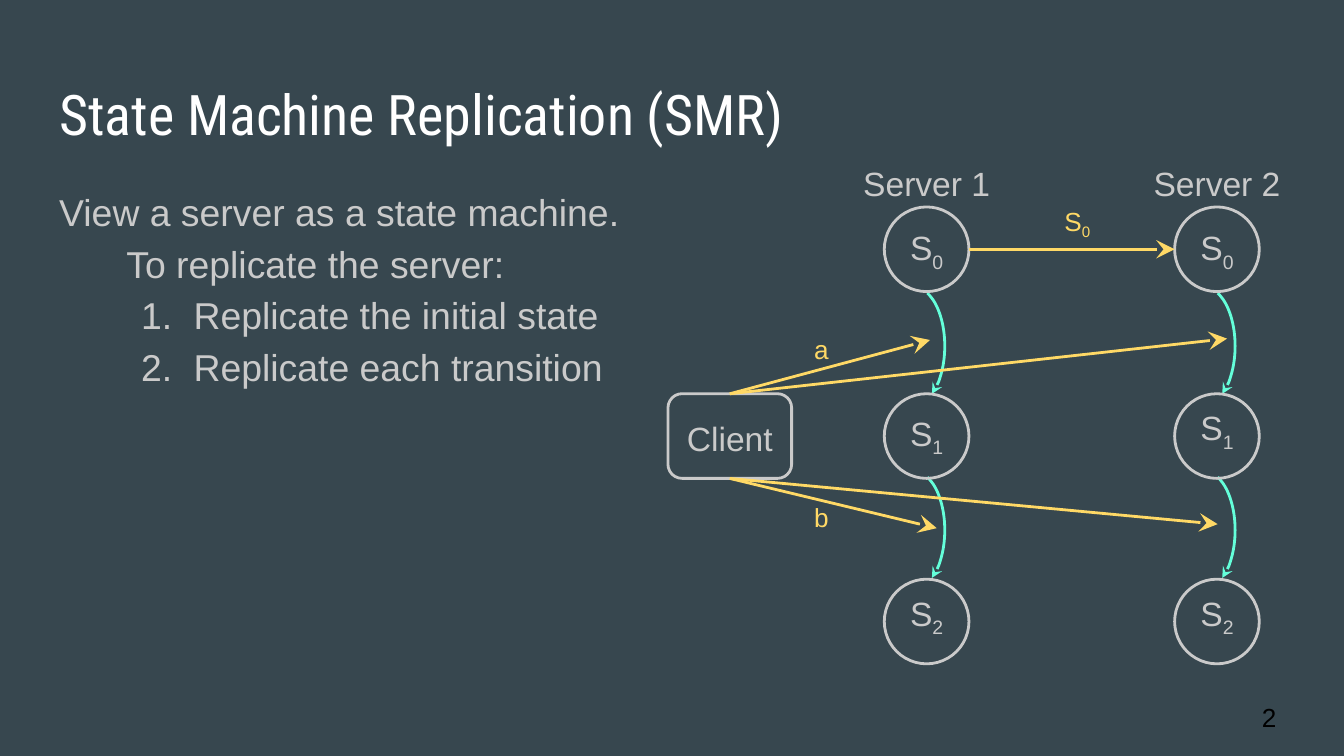
"""Build a slide that explains state machine replication with two servers and a client."""
from lxml.etree import SubElement
from pptx import Presentation
from pptx.dml.color import RGBColor
from pptx.enum.shapes import MSO_CONNECTOR as LINK, MSO_SHAPE as SHAPE
from pptx.enum.text import MSO_ANCHOR as ANCHOR, MSO_AUTO_SIZE as FIT, PP_ALIGN as ALIGN
from pptx.oxml.ns import qn
from pptx.util import Inches, Pt

SLATE = RGBColor(0x37, 0x47, 0x4F)
WHITE = RGBColor(0xFF, 0xFF, 0xFF)
GREY = RGBColor(0xCA, 0xCA, 0xCA)
YELLOW = RGBColor(0xFF, 0xD9, 0x66)
MINT = RGBColor(0x64, 0xFF, 0xDA)
BLACK = RGBColor(0, 0, 0)

TITLE = "State Machine Replication (SMR)"
BODY = [
    ("View a server as a state machine.", 0, 0, False),
    ("To replicate the server:", 0.5, 0, False),
    ("Replicate the initial state", 1, -0.39, True),
    ("Replicate each transition", 1, -0.39, True),
]
SERVERS = [("Server 1", 6.58, (1.66, 3.04, 4.38)), ("Server 2", 8.74, (1.66, 3, 4.38))]
STATE_TOPS = (1.54, 2.93, 4.31)
ARC_TOPS = (2.14, 3.51)
CIRCLE = 0.63
CLIENT = (4.97, 2.93, 0.92, CIRCLE)
COMMANDS = [
    ("a", 2.38, 0, [(9.13, 2.52), (6.92, 2.53)]),
    ("b", 3.63, 2, [(6.97, 3.93), (9.06, 3.9)]),
]


def place(shape, area):
    for name, value in zip(("left", "top", "width", "height"), area):
        setattr(shape, name, Inches(value))


def write(para, text, size, color, font="Arial", subscript=""):
    for part in filter(None, (text, subscript)):
        span = para.add_run()
        span.text = part
        for name, value in {"size": Pt(size), "name": font, "bold": False}.items():
            setattr(span.font, name, value)
        span.font.color.rgb = color
        if part is subscript:
            span.font._element.set("baseline", "-25000")


def prepare(frame, anchor=ANCHOR.TOP, wrap=True):
    formats = {"auto_size": FIT.NONE, "word_wrap": wrap, "vertical_anchor": anchor}
    formats.update({f"margin_{side}": Inches(0.1) for side in ("left", "top", "right", "bottom")})
    for name, value in formats.items():
        setattr(frame, name, value)
    return frame.paragraphs[0]


def label(page, area, text, size, color, anchor=ANCHOR.TOP, align=ALIGN.CENTER, subscript=""):
    box = page.shapes.add_textbox(*map(Inches, area))
    para = prepare(box.text_frame, anchor, wrap=False)
    para.alignment = align
    write(para, text, size, color, subscript=subscript)


def stroke(shape, color, head=None):
    shape.line.color.rgb = color
    shape.line.width = Pt(1.5)
    if head:
        SubElement(shape.line._get_or_add_ln(), qn("a:tailEnd"), type="stealth", w=head, len=head)


def outline(page, kind, area, color, head=None):
    shape = page.shapes.add_shape(kind, *map(Inches, area))
    shape.shadow.inherit = False
    shape.fill.background()
    stroke(shape, color, head)
    return shape


def arrow(page, start, end):
    link = page.shapes.add_connector(LINK.STRAIGHT, *map(Inches, start + end))
    stroke(link, YELLOW, head="lg")
    SubElement(link._element.spPr, qn("a:effectLst"))
    return link


def add_text(page):
    title, body = page.placeholders
    place(title, (0.34, 0.49, 9.32, 0.63))
    para = prepare(title.text_frame)
    para.alignment = ALIGN.LEFT
    write(para, TITLE, 30, WHITE, "Roboto Condensed")

    place(body, (0.34, 1.26, 9.32, 3.74))
    frame = body.text_frame
    prepare(frame)
    for index, (text, margin, indent, numbered) in enumerate(BODY):
        para = frame.add_paragraph() if index else frame.paragraphs[0]
        para.line_spacing, para.space_before = 1.15, Pt(0)
        props = para._p.get_or_add_pPr()
        props.set("marL", str(Inches(margin)))
        props.set("indent", str(Inches(indent)))
        if numbered:
            tint = SubElement(props, qn("a:buClr"))
            SubElement(tint, qn("a:srgbClr"), val=str(GREY))
            SubElement(props, qn("a:buFont"), typeface="Arial")
            SubElement(props, qn("a:buAutoNum"), type="arabicPeriod")
        else:
            SubElement(props, qn("a:buNone"))
        write(para, text, 20, GREY)


def add_servers(page):
    for name, left, label_tops in SERVERS:
        label(page, (left - 0.29, 1.11, 1.21, 0.52), name, 18, GREY)
        for top in ARC_TOPS:
            arc = outline(page, SHAPE.ARC, (left, top, 0.45, 0.87), MINT, head="med")
            arc.adjustments[0], arc.adjustments[1] = 170.173, 42.031
        for number, (top, label_top) in enumerate(zip(STATE_TOPS, label_tops)):
            outline(page, SHAPE.OVAL, (left, top, CIRCLE, CIRCLE), GREY)
            label(page, (left + 0.09, label_top, 0.45, 0.4), "S", 18, GREY,
                  ANCHOR.MIDDLE, subscript=str(number))
    (_, first, _), (_, second, _) = SERVERS
    middle = STATE_TOPS[0] + CIRCLE / 2
    arrow(page, (first + CIRCLE, middle), (second, middle))
    label(page, (7.79, 1.46, 0.45, 0.4), "S", 14, YELLOW, ANCHOR.MIDDLE, subscript="0")


def add_client(page):
    client = outline(page, SHAPE.ROUNDED_RECTANGLE, CLIENT, GREY)
    para = prepare(client.text_frame, wrap=False)
    client.text_frame.margin_top = Inches(0.15)
    para.alignment = ALIGN.CENTER
    write(para, "Client", 18, GREY)
    left, top, width, height = CLIENT
    for name, label_top, side, targets in COMMANDS:
        label(page, (5.96, label_top, 0.33, 0.43), name, 14, YELLOW, align=ALIGN.LEFT)
        start = (left + width / 2, top + height * side / 2)
        for target in targets:
            arrow(page, start, target).begin_connect(client, side)


def main():
    deck = Presentation()
    deck.slide_width = Inches(10)
    deck.slide_height = deck.slide_width * 9 // 16
    page = deck.slides.add_slide(deck.slide_layouts[1])
    page.background.fill.solid()
    page.background.fill.fore_color.rgb = SLATE
    add_text(page)
    add_servers(page)
    add_client(page)
    label(page, (9.29, 5.12, 0.6, 0.43), "2", 14, BLACK, ANCHOR.MIDDLE, ALIGN.LEFT)
    deck.save("out.pptx")


if __name__ == "__main__":
    main()
